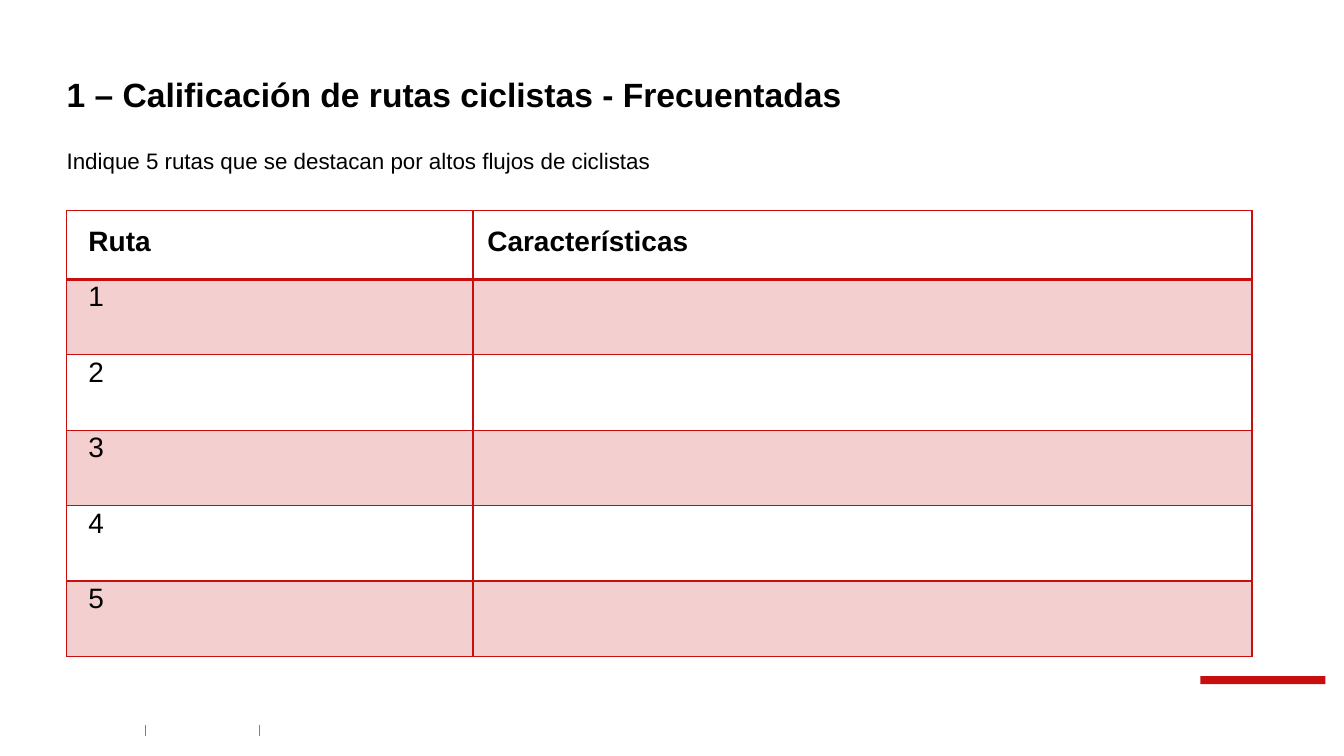
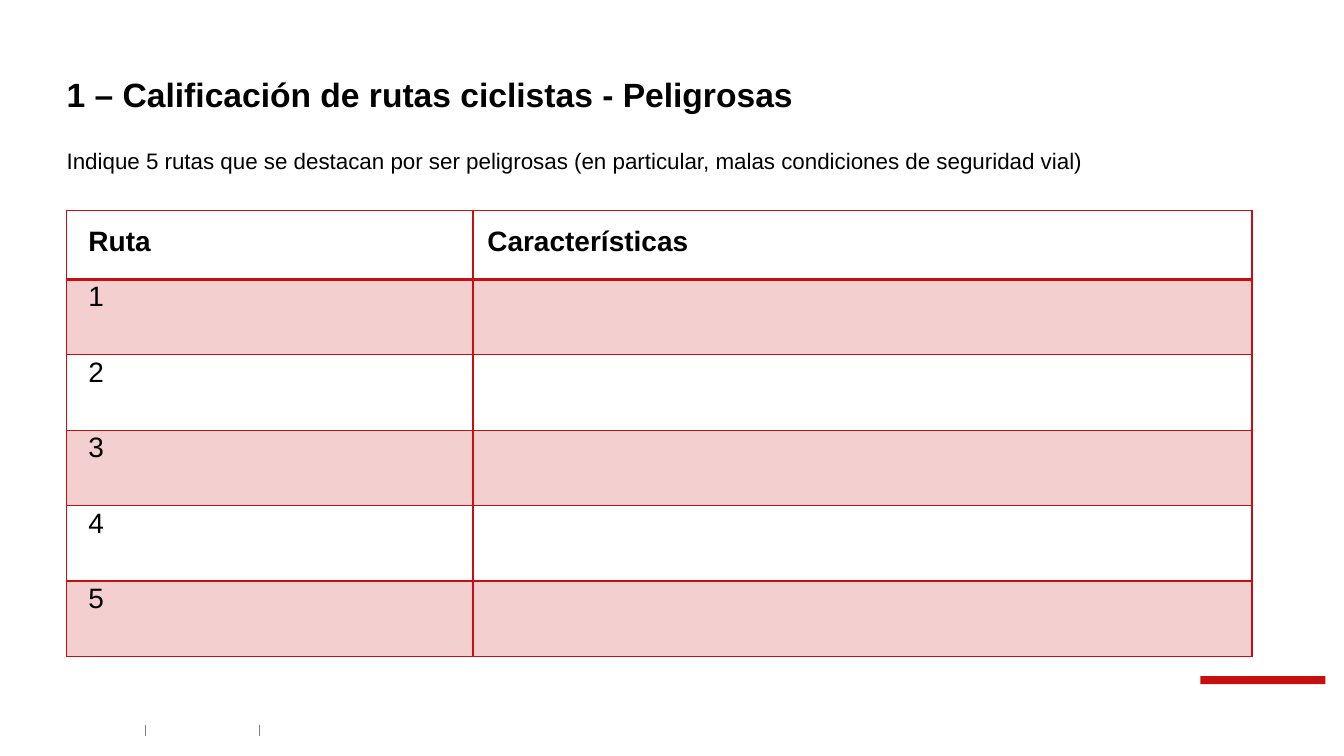
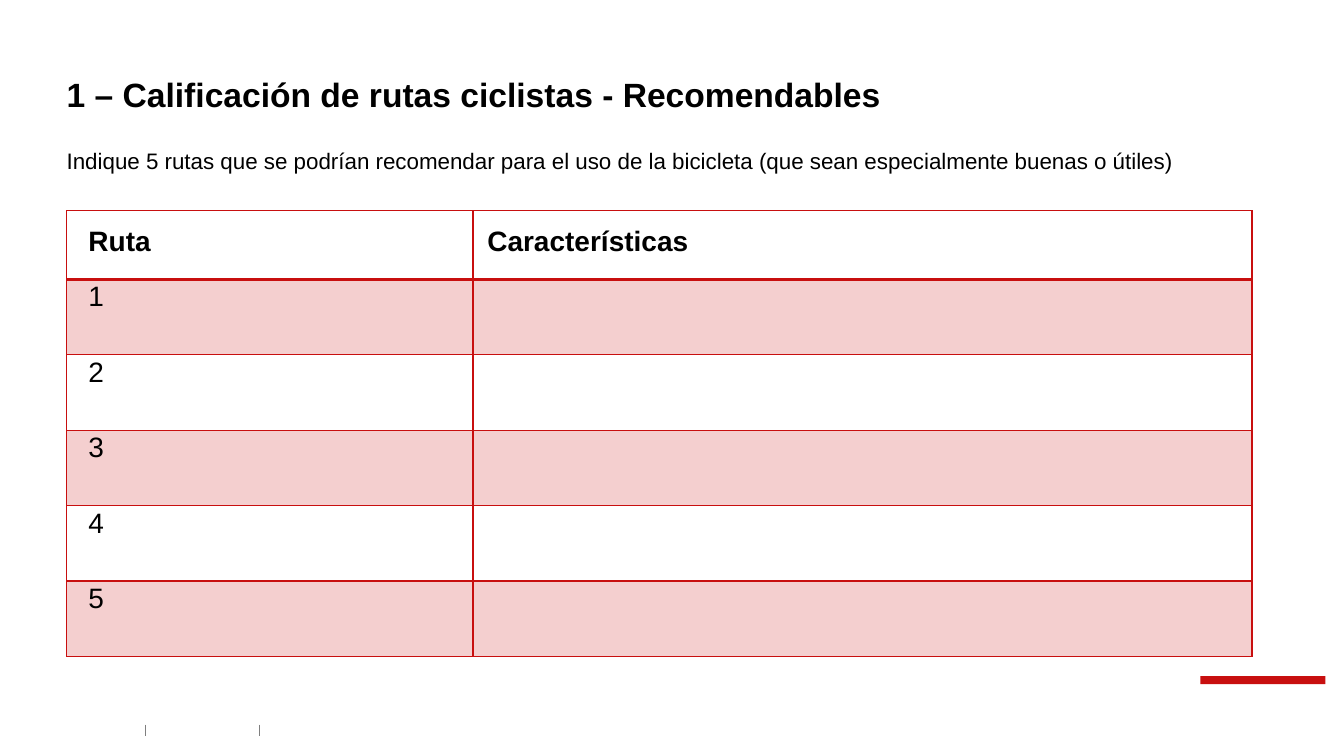
from lxml import etree
from pptx import Presentation
from pptx.dml.color import RGBColor
from pptx.enum.shapes import MSO_CONNECTOR, MSO_SHAPE
from pptx.enum.text import MSO_ANCHOR, MSO_AUTO_SIZE, PP_ALIGN
from pptx.oxml.ns import qn
from pptx.util import Cm, Pt

RECT, LINE = MSO_SHAPE.RECTANGLE, MSO_CONNECTOR.STRAIGHT
TOP, BOTTOM = MSO_ANCHOR.TOP, MSO_ANCHOR.BOTTOM
LEFT, FIXED = PP_ALIGN.LEFT, MSO_AUTO_SIZE.NONE

FONT = "Arial"
HEX = {"red": "C80F0F", "pink": "F4CFCF", "gray": "7F7F7F", "black": "000000"}
EDGE = 1.68
HEADS = ["Ruta", "Características"]
WIDTHS = [10.24, 19.63]
INSETS = [0.55, 0.36]
ROUTES = 5

PAGES = [
    ("Frecuentadas",
     "Indique 5 rutas que se destacan por altos flujos de ciclistas"),
    ("Peligrosas",
     "Indique 5 rutas que se destacan por ser peligrosas "
     "(en particular, malas condiciones de seguridad vial)"),
    ("Recomendables",
     "Indique 5 rutas que se podrían recomendar para el uso de la bicicleta "
     "(que sean especialmente buenas o útiles)"),
]


def color(name):
    return RGBColor.from_string(HEX[name])


def write(frame, text, size, bold=False, space=0.9):
    frame.text = text
    para = frame.paragraphs[0]
    para.alignment = LEFT
    para.line_spacing = space
    font = para.font
    font.name, font.size, font.bold = FONT, Pt(size), bold
    font.color.rgb = color("black")


def place(shape, top, width, height, anchor):
    shape.left, shape.top = Cm(EDGE), Cm(top)
    shape.width, shape.height = Cm(width), Cm(height)
    frame = shape.text_frame
    frame.word_wrap, frame.auto_size = True, FIXED
    frame.vertical_anchor = anchor
    frame.margin_left = frame.margin_top = frame.margin_bottom = 0
    frame.margin_right = Cm(0.2)
    return frame


# Text above the table
def add_title(slide, topic):
    frame = place(slide.shapes.title, 0.89, 31.72, 2.01, BOTTOM)
    write(frame, f"1 – Calificación de rutas ciclistas - {topic}", 24, bold=True)


def add_prompt(slide, text):
    box = slide.shapes.add_textbox(0, 0, 0, 0)
    write(place(box, 3.78, 30.33, 1.4, TOP), text, 16)


# Red bar and footer ticks
def add_footer(slide):
    bar = slide.shapes.add_shape(RECT, Cm(30.25), Cm(17.04), Cm(3.15), Cm(0.2))
    bar.shadow.inherit = False
    bar.fill.solid()
    bar.fill.fore_color.rgb = color("red")
    bar.line.fill.background()
    for x in (3.66, 6.55):
        tick = slide.shapes.add_connector(LINE, Cm(x), Cm(18.26), Cm(x), Cm(18.54))
        tick.line.color.rgb = color("gray")
        tick.line.width = Pt(0.75)
        etree.SubElement(tick.element.spPr, qn("a:effectLst"))


# Table of routes
def add_border(cell, side, points):
    props = cell._tc.get_or_add_tcPr()
    line = etree.SubElement(props, qn(f"a:ln{side}"), w=str(Pt(points)))
    fill = etree.SubElement(line, qn("a:solidFill"))
    etree.SubElement(fill, qn("a:srgbClr"), val=HEX["red"])


def style_cell(cell, row, col):
    cell.margin_left, cell.margin_right = Cm(INSETS[col]), Cm(0.36)
    cell.margin_top = cell.margin_bottom = 0
    rules = {"L": 1, "R": 1, "T": 2 if row == 1 else 1, "B": 2 if row == 0 else 1}
    for side, points in rules.items():
        add_border(cell, side, points)
    if row % 2:
        cell.fill.solid()
        cell.fill.fore_color.rgb = color("pink")
    else:
        cell.fill.background()


def add_routes(slide):
    rows = [HEADS] + [[str(n), ""] for n in range(1, ROUTES + 1)]
    heights = [1.73] + [1.9] * ROUTES
    table = slide.shapes.add_table(
        len(rows), len(HEADS), Cm(EDGE), Cm(5.31),
        Cm(sum(WIDTHS)), Cm(sum(heights))).table
    table.first_row = table.horz_banding = False
    for col, width in enumerate(WIDTHS):
        table.columns[col].width = Cm(width)
    for row, texts in enumerate(rows):
        table.rows[row].height = Cm(heights[row])
        head = row == 0
        for col, text in enumerate(texts):
            cell = table.cell(row, col)
            style_cell(cell, row, col)
            write(cell.text_frame, text, 20, head, 1.5 if head else 1.07)


def main():
    deck = Presentation()
    deck.slide_width, deck.slide_height = Cm(33.87), Cm(19.05)
    for topic, prompt in PAGES:
        slide = deck.slides.add_slide(deck.slide_layouts[5])
        add_footer(slide)
        add_title(slide, topic)
        add_prompt(slide, prompt)
        add_routes(slide)
    deck.save("out.pptx")


if __name__ == "__main__":
    main()
